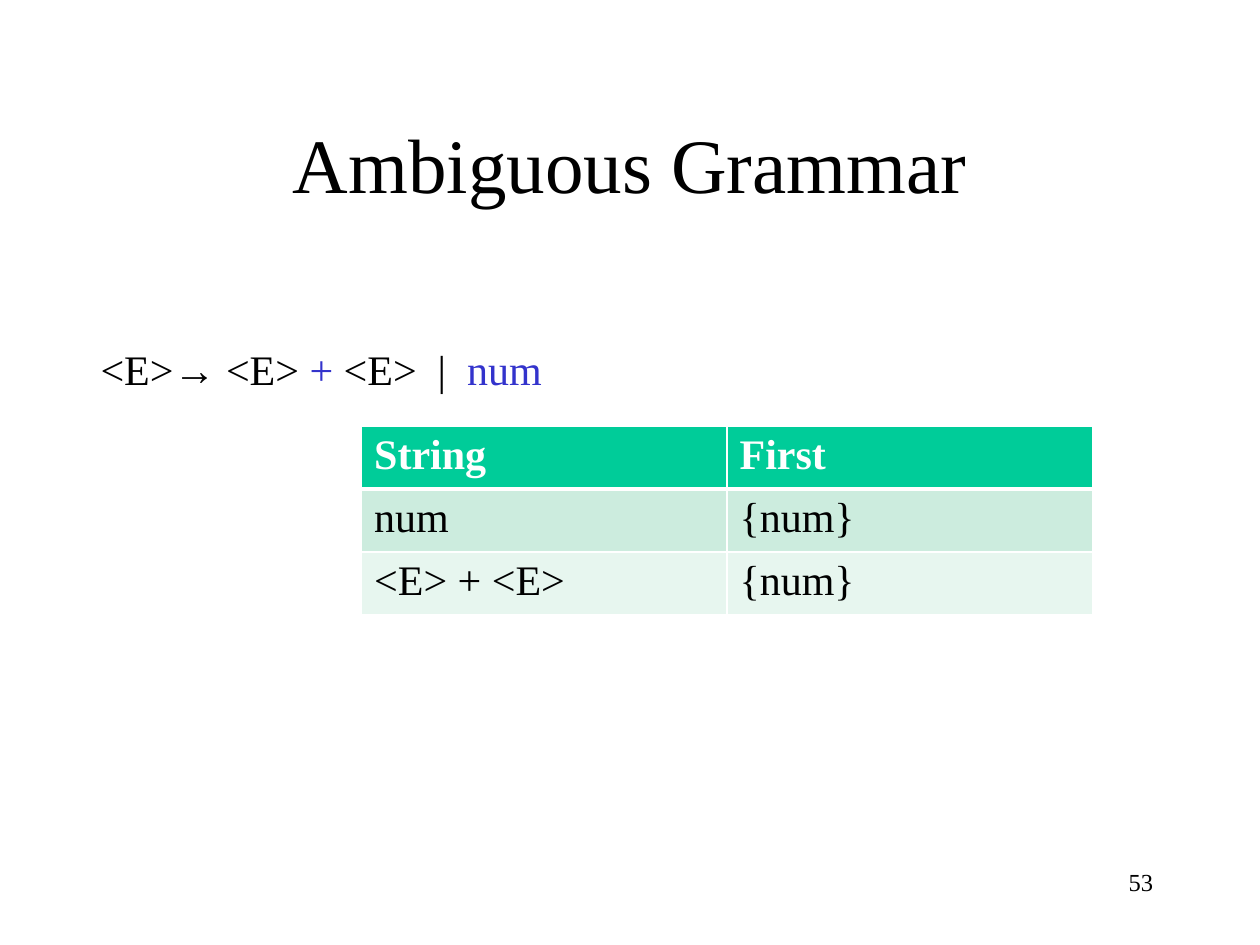
"""Build the Ambiguous Grammar slide with its table of First sets."""
import dataclasses

import lxml.etree
import pptx
import pptx.dml.color
import pptx.enum.text
import pptx.oxml.ns
import pptx.util

Inches = pptx.util.Inches
Align = pptx.enum.text.PP_ALIGN
Anchor = pptx.enum.text.MSO_ANCHOR

FONT = "Times New Roman"
COLORS = {
    "text": "000000",
    "terminal": "3333CC",
    "white": "FFFFFF",
    "header": "00CC99",
    "odd_row": "CCECDE",
    "even_row": "E7F6EF",
}


@dataclasses.dataclass(frozen=True)
class Piece:
    text: str
    color: str = "text"


@dataclasses.dataclass(frozen=True)
class Row:
    values: tuple[str, ...]
    fill: str
    color: str = "text"
    bold: bool = False
    bottom_width: float = 1


PRODUCTION = (
    Piece("<E>→ <E> "),
    Piece("+", "terminal"),
    Piece(" <E>  |  "),
    Piece("num", "terminal"),
)
FIRST_SETS = (
    Row(("String", "First"), "header", "white", True, 3),
    Row(("num", "{num}"), "odd_row"),
    Row(("<E> + <E>", "{num}"), "even_row"),
)


def rgb(name: str) -> pptx.dml.color.RGBColor:
    return pptx.dml.color.RGBColor.from_string(COLORS[name])


def format_run(run, size: float, color: str = "text", bold: bool = False) -> None:
    run.font.name = FONT
    run.font.size = pptx.util.Pt(size)
    run.font.bold = bold
    run.font.color.rgb = rgb(color)


def add_text(slide, box: tuple[float, ...], pieces: tuple[Piece, ...], size: float,
             alignment=Align.LEFT) -> None:
    shape = slide.shapes.add_textbox(*map(Inches, box))
    shape.text_frame.word_wrap = True
    paragraph = shape.text_frame.paragraphs[0]
    paragraph.alignment = alignment
    for piece in pieces:
        run = paragraph.add_run()
        run.text = piece.text
        format_run(run, size, piece.color)


def set_title(slide, text: str) -> None:
    title = slide.shapes.title
    title.left, title.top, title.width, title.height = map(Inches, (0.75, 0.67, 8.5, 1.25))
    title.text_frame.text = text
    title.text_frame.vertical_anchor = Anchor.MIDDLE
    paragraph = title.text_frame.paragraphs[0]
    paragraph.alignment = Align.CENTER
    format_run(paragraph.runs[0], 44)


def set_borders(cell, widths: dict[str, float]) -> None:
    qn = pptx.oxml.ns.qn
    properties = cell._tc.get_or_add_tcPr()
    for position, (side, width) in enumerate(widths.items()):
        line = lxml.etree.Element(qn(f"a:ln{side}"), w=str(pptx.util.Pt(width)))
        fill = lxml.etree.SubElement(line, qn("a:solidFill"))
        lxml.etree.SubElement(fill, qn("a:srgbClr"), val=COLORS["white"])
        properties.insert(position, line)


def add_first_table(slide, rows: tuple[Row, ...]) -> None:
    frame = slide.shapes.add_table(len(rows), len(rows[0].values), Inches(2.87),
                                   Inches(3.38), Inches(5.8), Inches(1.39))
    top_width = 1
    for row_index, row in enumerate(rows):
        for column_index, value in enumerate(row.values):
            cell = frame.table.cell(row_index, column_index)
            cell.text_frame.text = value
            format_run(cell.text_frame.paragraphs[0].runs[0], 24, row.color, row.bold)
            cell.fill.solid()
            cell.fill.fore_color.rgb = rgb(row.fill)
            set_borders(cell, {"L": 1, "R": 1, "T": top_width, "B": row.bottom_width})
        top_width = row.bottom_width


def main() -> None:
    presentation = pptx.Presentation()
    presentation.slide_width, presentation.slide_height = Inches(10), Inches(7.5)
    slide = presentation.slides.add_slide(presentation.slide_layouts[5])
    set_title(slide, "Ambiguous Grammar")
    add_text(slide, (0.7, 2.68, 4.04, 0.5), PRODUCTION, 24)
    add_first_table(slide, FIRST_SETS)
    add_text(slide, (7.17, 6.83, 2.08, 0.5), (Piece("53"),), 14, Align.RIGHT)
    presentation.save("out.pptx")


if __name__ == "__main__":
    main()
